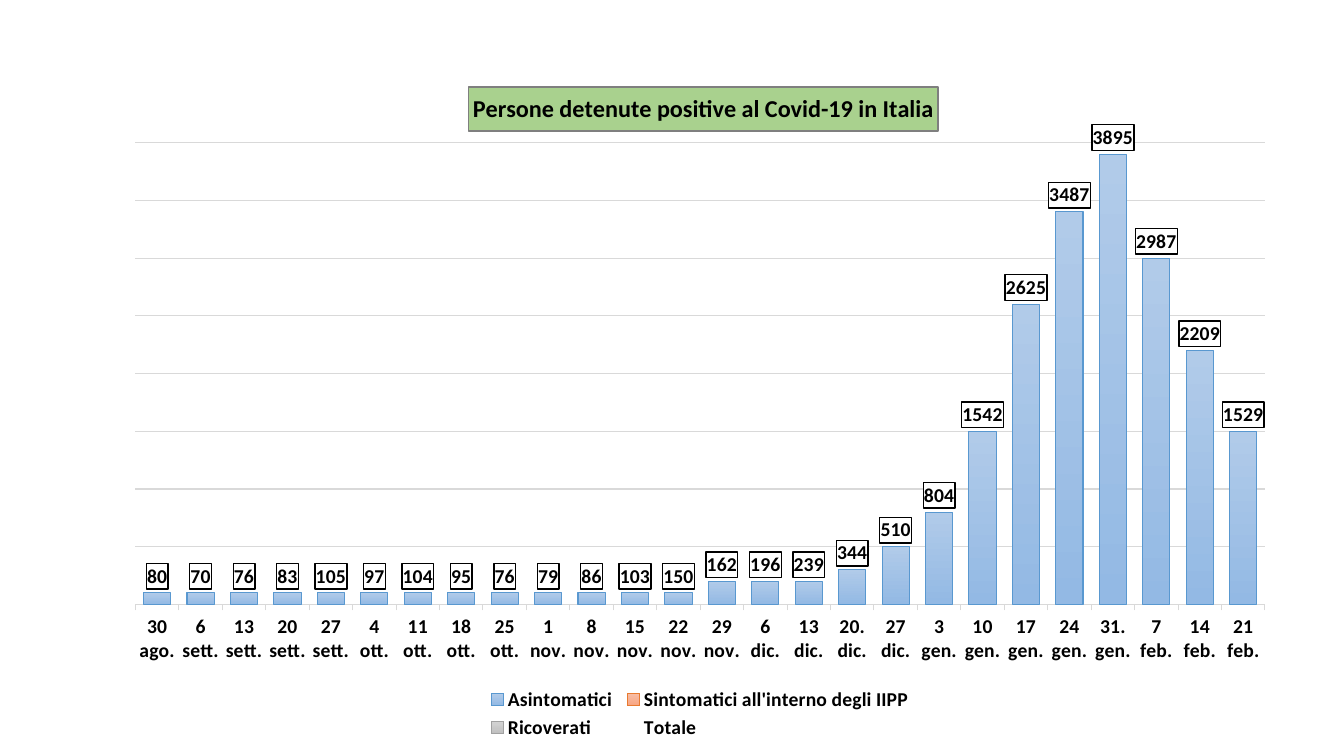
from dataclasses import dataclass

from lxml import etree
from pptx import Presentation
from pptx.chart.data import CategoryChartData
from pptx.dml.color import RGBColor as RGB
from pptx.enum.chart import XL_CHART_TYPE as CHART, XL_LABEL_POSITION as LABEL
from pptx.enum.chart import XL_LEGEND_POSITION as LEGEND, XL_TICK_MARK as TICK
from pptx.oxml import parse_xml
from pptx.oxml.ns import nsdecls, qn
from pptx.util import Inches, Pt


@dataclass(frozen=True)
class Theme:
    font: str = "Calibri"
    text: str = "000000"
    grid: str = "D9D9D9"
    label_fill: str = "FFFFFF"
    title_fill: str = "A9D18E"
    title_line: str = "7F7F7F"
    body_size: int = 14
    title_size: float = 17.3
    line_width: float = 0.75
    bars: tuple = (
        ("B1CBE9", "93B9E4", "5998D0"),
        ("F7BDA5", "F8A582", "E87A30"),
        ("D2D2D2", "C0C0C0", "A1A1A1"),
    )


THEME = Theme()
TITLE = "Persone detenute positive al Covid-19 in Italia"
WEEKS = (
    "30 ago.", "6 sett.", "13 sett.", "20 sett.", "27 sett.", "4 ott.", "11 ott.",
    "18 ott.", "25 ott.", "1 nov.", "8 nov.", "15 nov.", "22 nov.", "29 nov.",
    "6 dic.", "13 dic.", "20. dic.", "27 dic.", "3 gen.", "10 gen.", "17 gen.",
    "24 gen.", "31. gen.", "7 feb.", "14 feb.", "21 feb.",
)
TOTALS = (80, 70, 76, 83, 105, 97, 104, 95, 76, 79, 86, 103, 150, 162, 196, 239,
          344, 510, 804, 1542, 2625, 3487, 3895, 2987, 2209, 1529)
ASYMPTOMATIC = (100,) * 13 + (200, 200, 200, 300, 500, 800, 1500, 2600, 3400,
                              3900, 3000, 2200, 1500)
SYMPTOMATIC = HOSPITAL = (0,) * len(WEEKS)


def style_font(font, size=THEME.body_size):
    font.name = THEME.font
    font.size = Pt(size)
    font.bold = True
    font.color.rgb = RGB.from_string(THEME.text)


def style_line(line, color, width=THEME.line_width):
    line.color.rgb = RGB.from_string(color)
    line.width = Pt(width)


def manual_layout(x, y, w=None, h=None, inner=False):
    layout = etree.Element(qn("c:layout"))
    manual = etree.SubElement(layout, qn("c:manualLayout"))
    parts = [("layoutTarget", "inner")] if inner else []
    parts += [("xMode", "edge"), ("yMode", "edge"), ("x", x), ("y", y)]
    parts += [("w", w), ("h", h)] if w else []
    for tag, value in parts:
        etree.SubElement(manual, qn(f"c:{tag}")).set("val", str(value))
    return layout


def set_layout(element, layout, after=None):
    for old in element.findall(qn("c:layout")):
        element.remove(old)
    if after is None:
        element.insert(0, layout)
    else:
        element.find(qn(after)).addnext(layout)


def add_title(chart):
    chart.has_title = True
    title = chart.chart_title
    p = title.text_frame.paragraphs[0]
    p.text = TITLE
    style_font(p.runs[0].font, THEME.title_size)
    title.include_in_layout = False
    title.format.fill.solid()
    title.format.fill.fore_color.rgb = RGB.from_string(THEME.title_fill)
    style_line(title.format.line, THEME.title_line, 1.25)
    set_layout(title._element, manual_layout(0.303, 0.029), "c:tx")


def style_axes(chart):
    cat = chart.category_axis
    cat.major_tick_mark = TICK.OUTSIDE
    style_font(cat.tick_labels.font)
    style_line(cat.format.line, THEME.grid)
    val = chart.value_axis
    val.visible = False
    val.minimum_scale, val.maximum_scale, val.major_unit = 0, 4000, 500
    style_line(val.major_gridlines.format.line, THEME.grid)


def style_bars(plot):
    plot.gap_width, plot.overlap = 60, 100
    *bars, total = plot.series
    for series, (top, bottom, edge) in zip(bars, THEME.bars):
        fill = series.format.fill
        fill.gradient()
        fill.gradient_angle = 270
        for stop, color in zip(fill.gradient_stops, (top, bottom)):
            stop.color.rgb = RGB.from_string(color)
        style_line(series.format.line, edge)
    total.format.fill.background()
    total.format.line.fill.background()
    labels = total.data_labels
    labels.show_value = True
    labels.position = LABEL.INSIDE_BASE
    style_font(labels.font)
    box = parse_xml(
        f'<c:spPr {nsdecls("c", "a")}>'
        f'<a:solidFill><a:srgbClr val="{THEME.label_fill}"/></a:solidFill>'
        f'<a:ln w="{Pt(1)}"><a:solidFill><a:srgbClr val="{THEME.text}"/></a:solidFill></a:ln>'
        '</c:spPr>')
    labels._element.find(qn("c:txPr")).addprevious(box)


def add_legend(chart):
    chart.has_legend = True
    legend = chart.legend
    legend.position = LEGEND.BOTTOM
    legend.include_in_layout = False
    style_font(legend.font)
    set_layout(legend._element, manual_layout(0.315, 0.911, 0.37, 0.089), "c:legendPos")


def add_cases_chart(s, x, y, w, h):
    data = CategoryChartData()
    data.categories = WEEKS
    data.add_series("Asintomatici", ASYMPTOMATIC)
    data.add_series("Sintomatici all'interno degli IIPP", SYMPTOMATIC)
    data.add_series("Ricoverati", HOSPITAL)
    data.add_series("Totale", TOTALS)
    frame = s.shapes.add_chart(
        CHART.COLUMN_STACKED, Inches(x), Inches(y), Inches(w), Inches(h), data)
    chart = frame.chart
    style_font(chart.font)
    add_title(chart)
    style_axes(chart)
    style_bars(chart.plots[0])
    add_legend(chart)
    plot_area = chart._chartSpace.chart.plotArea
    set_layout(plot_area, manual_layout(0.02, 0.111, 0.96, 0.683, inner=True))


def main():
    prs = Presentation()
    prs.slide_width, prs.slide_height = Inches(13.33), Inches(7.5)
    s = prs.slides.add_slide(prs.slide_layouts[6])
    add_cases_chart(s, 1.11, 0.67, 11.67, 6.71)
    prs.save("out.pptx")


if __name__ == "__main__":
    main()
